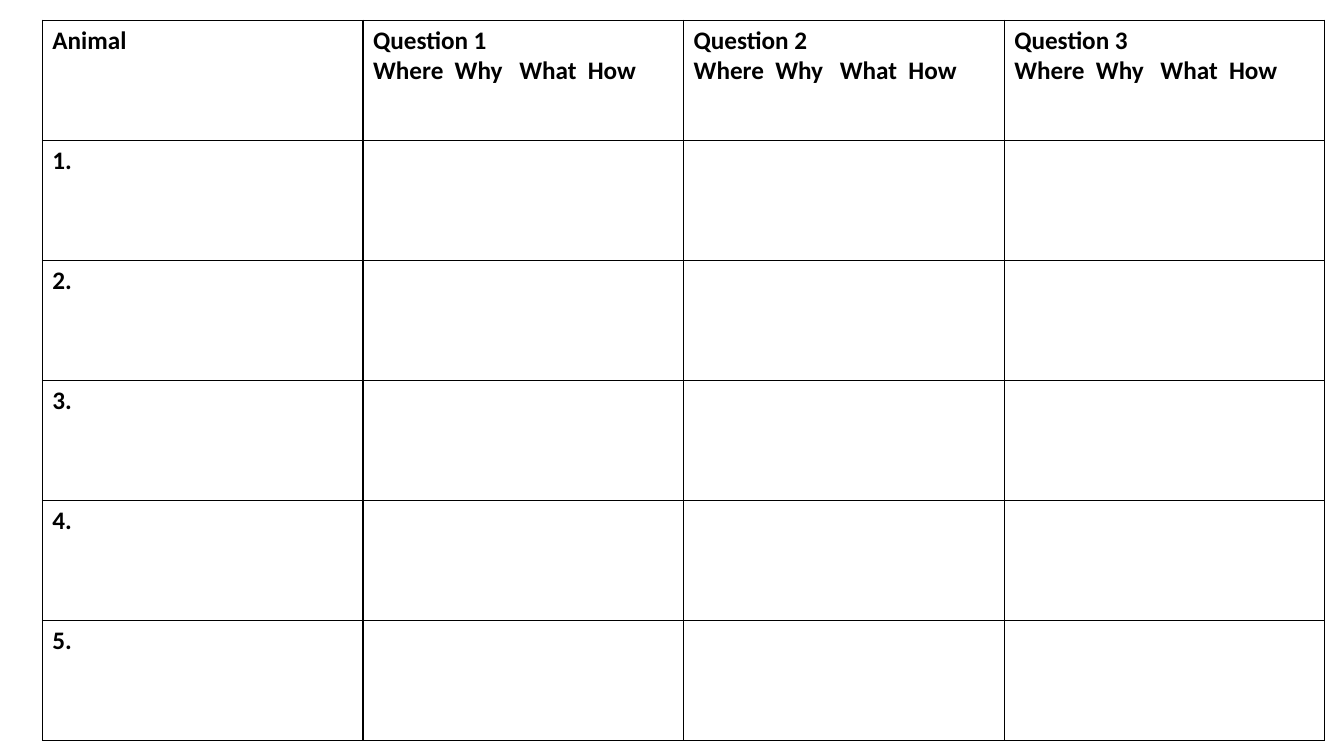
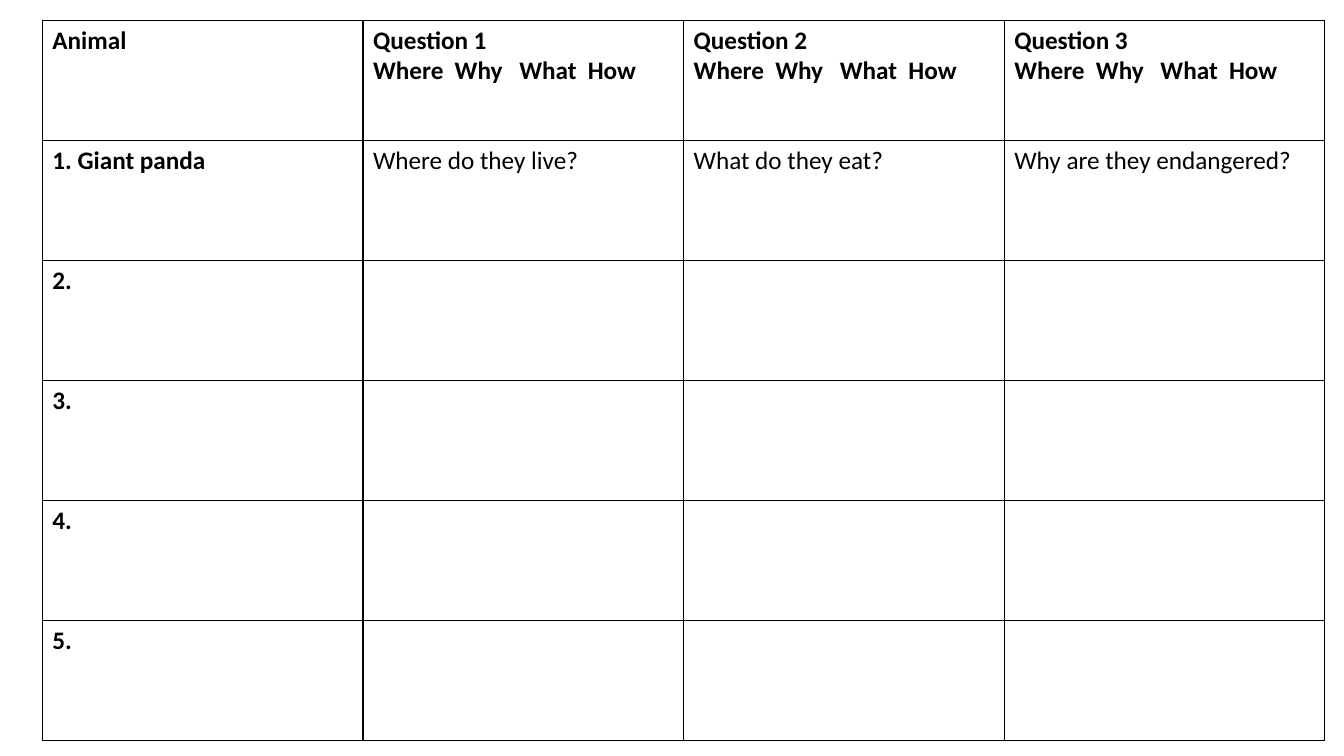
from lxml import etree
from pptx import Presentation
from pptx import util as u
from pptx.dml.color import RGBColor
from pptx.oxml import ns

BLACK = RGBColor(0, 0, 0)
WHITE = RGBColor(255, 255, 255)
FONT = "Calibri"
ROWS, COLS = 6, 4
TABS = (0.81, 1.45, 2.13)
WORDS = "Where\tWhy\tWhat\tHow"

deck = Presentation()
deck.slide_width = u.Inches(13.33)
deck.slide_height = u.Inches(7.5)
left, top = u.Inches(0.42), u.Inches(0.2)
wide, high = u.Inches(3.18), u.Inches(7.15 / ROWS)


def write(cell, copy, size=18, bold=True, color=BLACK):
    frame = cell.text_frame
    for i, line in enumerate(copy.split("\n")):
        para = frame.add_paragraph() if i else frame.paragraphs[0]
        if "\t" in line:
            stops = etree.SubElement(para._p.get_or_add_pPr(), ns.qn("a:tabLst"))
            for stop in TABS:
                etree.SubElement(stops, ns.qn("a:tab"), pos=str(u.Inches(stop)), algn="l")
        run = para.add_run()
        run.text = line
        run.font.name = FONT
        run.font.size = u.Pt(size)
        run.font.bold = bold
        run.font.color.rgb = color


def edge(cell, color=BLACK, width=1):
    props = cell._tc.get_or_add_tcPr()
    for side in ("lnL", "lnR", "lnT", "lnB"):
        line = etree.SubElement(props, ns.qn("a:" + side), w=str(u.Pt(width)))
        fill = etree.SubElement(line, ns.qn("a:solidFill"))
        etree.SubElement(fill, ns.qn("a:srgbClr"), val=str(color))


heads = ["Animal"] + [f"Question {n}\n{WORDS}" for n in range(1, COLS)]
panda = ["Giant panda", "Where do they live?", "What do they eat?", "Why are they endangered?"]

for first in ([], panda):
    slide = deck.slides.add_slide(deck.slide_layouts[6])
    grid = slide.shapes.add_table(ROWS, COLS, left, top, wide * COLS, high * ROWS).table
    grid.first_row = grid.horz_banding = False
    for col in grid.columns:
        col.width = wide
    for row in grid.rows:
        row.height = high
    for cell in grid.iter_cells():
        edge(cell)
        cell.fill.solid()
        cell.fill.fore_color.rgb = WHITE

    for c, head in enumerate(heads):
        write(grid.cell(0, c), head)
    for r in range(1, ROWS):
        name = f" {first[0]}" if first and r == 1 else ""
        write(grid.cell(r, 0), f"{r}.{name}")
    for c, ask in enumerate(first[1:], 1):
        write(grid.cell(1, c), ask, bold=False)

deck.save("out.pptx")
